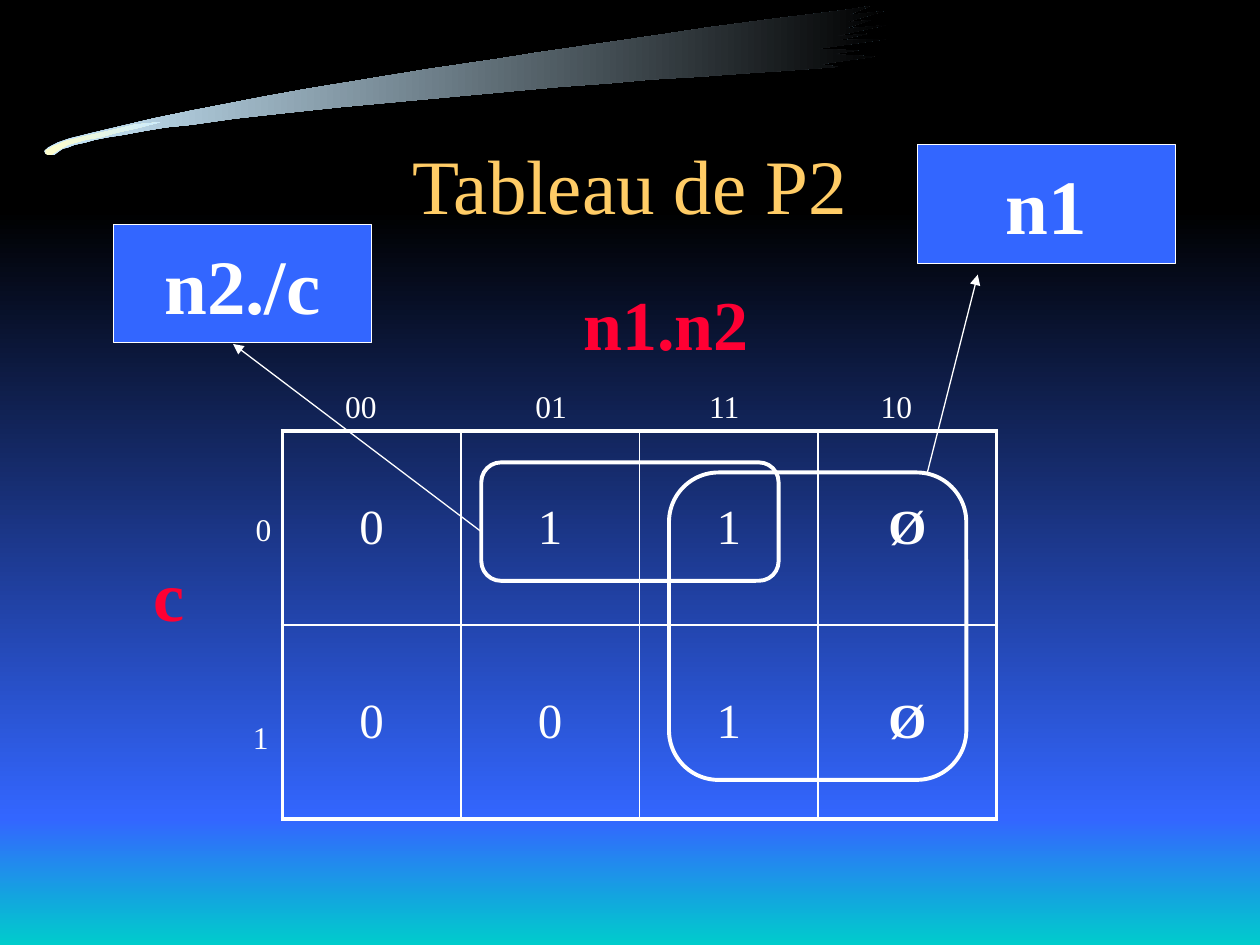
from lxml import etree
from pptx import Presentation
from pptx import util as u
from pptx.dml.color import RGBColor
from pptx.enum import shapes, text
from pptx.oxml.ns import qn

COLORS = {
    "black": "000000", "blue": "3366FF", "teal": "00CCCC", "ice": "CCECFF",
    "cream": "FFFFCC", "gold": "FFCC66", "red": "FF0033", "white": "FFFFFF",
}
FONT = "Times New Roman"
COLUMN = u.Inches(10) / 100
ROW = u.Inches(7.5) / 75
THIN, THICK = 0.75, 2.25

BRUSH = [
    (665, 53), (650, 51), (694, 45), (660, 43), (681, 40), (647, 39), (703, 31), (664, 32),
    (688, 27), (661, 29), (703, 20), (669, 23), (691, 16), (670, 18), (701, 9), (673, 12),
    (690, 5), (671, 8), (647, 11), (614, 15), (561, 22), (528, 27), (494, 32), (425, 42),
    (394, 47), (373, 50), (339, 55), (296, 62), (241, 71), (208, 77), (151, 88), (122, 94),
    (71, 106), (55, 110), (46, 113), (38, 117), (36, 119), (35, 120), (36, 122), (38, 123),
    (43, 123), (47, 120), (50, 118), (54, 117), (59, 115), (68, 113), (75, 111), (85, 109),
    (98, 107), (114, 104), (132, 101), (152, 99), (187, 94), (214, 91), (270, 85), (335, 79),
    (389, 74), (443, 69), (484, 66), (517, 63), (553, 61), (594, 58), (625, 56),
]
TIP = [
    (36, 119), (39, 118), (42, 116), (45, 115), (52, 112), (64, 109), (86, 104), (107, 99),
    (127, 97), (108, 102), (94, 105), (80, 109), (68, 111), (54, 115), (47, 119), (44, 121),
    (41, 123), (38, 123), (36, 122), (36, 121),
]


def rgb(name):
    return RGBColor.from_string(COLORS[name])


def place(box):
    left, top, width, height = box
    return [round(n) for n in (left * COLUMN, top * ROW, width * COLUMN, height * ROW)]


def shade(shape, start, end, angle):
    shape.shadow.inherit = False
    shape.line.fill.background()
    shape.fill.gradient()
    shape.fill.gradient_angle = angle
    for stop, name, position in zip(shape.fill.gradient_stops, (start, end), (0, 1)):
        stop.color.rgb = rgb(name)
        stop.position = position


def write(frame, words, size, color, bold=False, align=text.PP_ALIGN.CENTER):
    paragraph = frame.paragraphs[0]
    paragraph.text = words
    paragraph.alignment = align
    font = paragraph.font
    font.name, font.size, font.bold = FONT, u.Pt(size), bold
    font.color.rgb = rgb(color)


def add_background(slide, boxes):
    slide.background.fill.solid()
    slide.background.fill.fore_color.rgb = rgb("black")
    for box, start, end in zip(boxes, ("black", "blue"), ("blue", "teal")):
        band = slide.shapes.add_shape(shapes.MSO_SHAPE.RECTANGLE, *place(box))
        shade(band, start, end, 270)


def add_stroke(slide, points, start, end):
    builder = slide.shapes.build_freeform(*points[0], scale=COLUMN / 10)
    builder.add_line_segments(points[1:], close=True)
    shade(builder.convert_to_shape(), start, end, 0)


def add_label(slide, box, words, size, color, bold=False):
    frame = slide.shapes.add_textbox(*place(box)).text_frame
    frame.word_wrap = False
    write(frame, words, size, color, bold, text.PP_ALIGN.LEFT)


def add_title(slide, box, words):
    frame = slide.shapes.add_textbox(*place(box)).text_frame
    frame.word_wrap = True
    frame.vertical_anchor = text.MSO_ANCHOR.MIDDLE
    write(frame, words, 44, "gold")


def set_borders(cell, widths):
    properties = cell._tc.get_or_add_tcPr()
    for side, width in widths.items():
        line = etree.SubElement(properties, qn(f"a:ln{side}"), w=str(u.Pt(width)))
        fill = etree.SubElement(line, qn("a:solidFill"))
        etree.SubElement(fill, qn("a:srgbClr"), val=COLORS["white"])


def add_karnaugh_table(slide, box, values):
    rows, columns = len(values), len(values[0])
    table = slide.shapes.add_table(rows, columns, *place(box)).table
    table.first_row = table.horz_banding = False
    for r, row in enumerate(values):
        for c, value in enumerate(row):
            cell = table.cell(r, c)
            outer = {"L": c == 0, "R": c == columns - 1, "T": r == 0, "B": r == rows - 1}
            set_borders(cell, {side: THICK if edge else 1 for side, edge in outer.items()})
            cell.fill.background()
            cell.vertical_anchor = text.MSO_ANCHOR.MIDDLE
            write(cell.text_frame, value, 28, "white", value == "Ø")


def add_loop(slide, box):
    loop = slide.shapes.add_shape(shapes.MSO_SHAPE.ROUNDED_RECTANGLE, *place(box))
    loop.shadow.inherit = False
    loop.fill.background()
    loop.line.color.rgb = rgb("white")
    loop.line.width = u.Pt(THICK)


def add_arrow(slide, start, end):
    ends = place(start + end)
    arrow = slide.shapes.add_connector(shapes.MSO_CONNECTOR.STRAIGHT, *ends)
    arrow.line.color.rgb = rgb("white")
    arrow.line.width = u.Pt(THIN)
    etree.SubElement(arrow.line._get_or_add_ln(), qn("a:tailEnd"), type="triangle")
    etree.SubElement(arrow._element.spPr, qn("a:effectLst"))


def add_term(slide, box, words):
    term = slide.shapes.add_shape(shapes.MSO_SHAPE.RECTANGLE, *place(box))
    term.shadow.inherit = False
    term.fill.solid()
    term.fill.fore_color.rgb = rgb("blue")
    term.line.color.rgb = rgb("white")
    term.line.width = u.Pt(THIN)
    term.text_frame.word_wrap = False
    term.text_frame.vertical_anchor = text.MSO_ANCHOR.MIDDLE
    write(term.text_frame, words, 44, "white", True)


def main():
    presentation = Presentation()
    presentation.slide_width, presentation.slide_height = u.Inches(10), u.Inches(7.5)
    slide = presentation.slides.add_slide(presentation.slide_layouts[6])

    add_background(slide, [(0, 16.7, 100, 48.3), (0, 65, 100, 10)])
    add_stroke(slide, BRUSH, "ice", "black")
    add_stroke(slide, TIP, "cream", "ice")
    add_title(slide, (7.5, 8.3, 85, 12.5), "Tableau de P2")
    add_karnaugh_table(slide, (22.4, 34.2, 56.7, 30.8), ["011Ø", "001Ø"])

    for left, code in zip((26.4, 41.5, 55.3, 68.9), ("00", "01", "11", "10")):
        add_label(slide, (left, 30.2, 4.5, 4), code, 18, "white")
    for left, top, code in ((19.3, 40, "0"), (19.1, 56.5, "1")):
        add_label(slide, (left, top, 3.3, 4), code, 18, "white")
    add_label(slide, (11.2, 43.3, 4.5, 7.7), "c", 40, "red", True)
    add_label(slide, (45.3, 21.8, 15.1, 7.7), "n1.n2", 40, "red", True)

    add_loop(slide, (53.1, 37.5, 23.6, 24.4))
    add_loop(slide, (38.2, 36.7, 23.6, 9.4))
    add_arrow(slide, (73.6, 37.5), (77.6, 21.8))
    add_term(slide, (72.8, 11.5, 20.5, 9.4), "n1")
    add_arrow(slide, (38.2, 42.2), (18.5, 27.3))
    add_term(slide, (9, 17.8, 20.5, 9.4), "n2./c")
    presentation.save("out.pptx")


if __name__ == "__main__":
    main()
